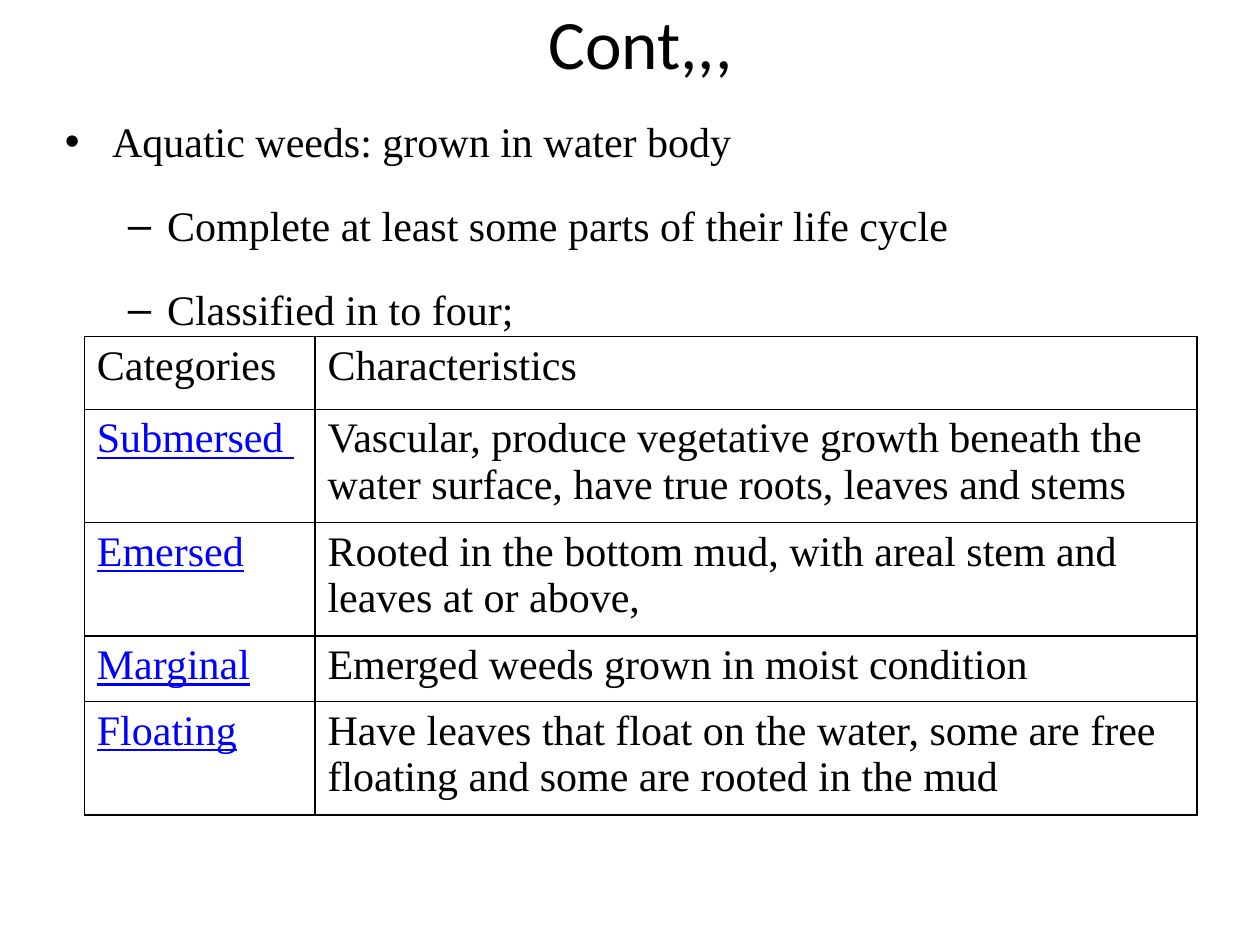
from lxml import etree
from pptx import Presentation
from pptx.dml.color import RGBColor
from pptx.enum.text import MSO_ANCHOR as ANCHOR, PP_ALIGN as ALIGN
from pptx.oxml.ns import qn
from pptx.util import Cm, Pt

COLORS = {"text": "000000", "link": "0000FF", "border": "000000"}
BODY_FONT = "Times New Roman"
BULLETS = [
    (0, "Aquatic weeds: grown in water body"),
    (1, "Complete at least some parts of their life cycle"),
    (1, "Classified in to four;"),
]
LEVELS = [("•", Cm(0.95), Cm(-0.95)), ("–", Cm(2.06), Cm(-0.79))]
HEADER, ONE_LINE, TWO_LINES = Cm(1.47), Cm(1.32), Cm(2.14)
ROWS = [
    (HEADER, "Categories", "Characteristics"),
    (TWO_LINES, "Submersed ", "Vascular, produce vegetative growth beneath the water "
                              "surface, have true roots, leaves and stems"),
    (TWO_LINES, "Emersed", "Rooted in the bottom mud, with areal stem and leaves "
                           "at or above,"),
    (ONE_LINE, "Marginal", "Emerged weeds grown in moist condition"),
    (TWO_LINES, "Floating", "Have leaves that float on the water, some are free "
                            "floating and some are rooted in the mud"),
]
COL_WIDTHS = [Cm(4.65), Cm(17.78)]


def format_runs(p, size=24, font=BODY_FONT, color="text", underline=False):
    for r in p.runs:
        r.font.size = Pt(size)
        r.font.name = font
        r.font.color.rgb = RGBColor.from_string(COLORS[color])
        r.font.underline = underline


def add_text_frame(slide, left, top, width, height):
    tf = slide.shapes.add_textbox(left, top, width, height).text_frame
    tf.word_wrap = True
    return tf


def add_title(slide, text):
    tf = add_text_frame(slide, Cm(1.48), Cm(0), Cm(22.86), Cm(1.7))
    tf.vertical_anchor = ANCHOR.MIDDLE
    p = tf.paragraphs[0]
    p.text = text
    p.alignment = ALIGN.CENTER
    format_runs(p, 39.6, "Calibri")


def set_bullet(p, level):
    char, margin, indent = LEVELS[level]
    p.level = level
    pPr = p._p.get_or_add_pPr()
    pPr.set("marL", str(margin))
    pPr.set("indent", str(indent))
    etree.SubElement(pPr, qn("a:buFont"), typeface="Arial")
    etree.SubElement(pPr, qn("a:buChar"), char=char)


def add_bullets(slide, items):
    tf = add_text_frame(slide, Cm(1.06), Cm(1.7), Cm(22.86), Cm(12.57))
    for i, (level, text) in enumerate(items):
        p = tf.add_paragraph() if i else tf.paragraphs[0]
        p.text = text
        p.line_spacing = 1.5
        p.space_before = Pt(4.8)
        set_bullet(p, level)
        format_runs(p)


def set_borders(cell):
    tcPr = cell._tc.get_or_add_tcPr()
    for i, side in enumerate(("lnL", "lnR", "lnT", "lnB")):
        ln = etree.Element(qn(f"a:{side}"), w=str(Pt(1)))
        fill = etree.SubElement(ln, qn("a:solidFill"))
        etree.SubElement(fill, qn("a:srgbClr"), val=COLORS["border"])
        tcPr.insert(i, ln)


def add_category_table(slide, rows):
    height = sum(row[0] for row in rows)
    table = slide.shapes.add_table(len(rows), len(COL_WIDTHS), Cm(1.7), Cm(6.78),
                                   sum(COL_WIDTHS), height).table
    table.first_row = table.horz_banding = False
    for column, width in zip(table.columns, COL_WIDTHS):
        column.width = width
    for i, (row_height, *texts) in enumerate(rows):
        table.rows[i].height = row_height
        for j, text in enumerate(texts):
            cell = table.cell(i, j)
            cell.fill.background()
            set_borders(cell)
            cell.text_frame.text = text
            is_link = i > 0 and j == 0
            format_runs(cell.text_frame.paragraphs[0],
                        color="link" if is_link else "text", underline=is_link)


def main():
    prs = Presentation()
    prs.slide_width, prs.slide_height = Cm(25.4), Cm(19.05)
    slide = prs.slides.add_slide(prs.slide_layouts[6])
    add_title(slide, "Cont,,,")
    add_bullets(slide, BULLETS)
    add_category_table(slide, ROWS)
    prs.save("out.pptx")


if __name__ == "__main__":
    main()
